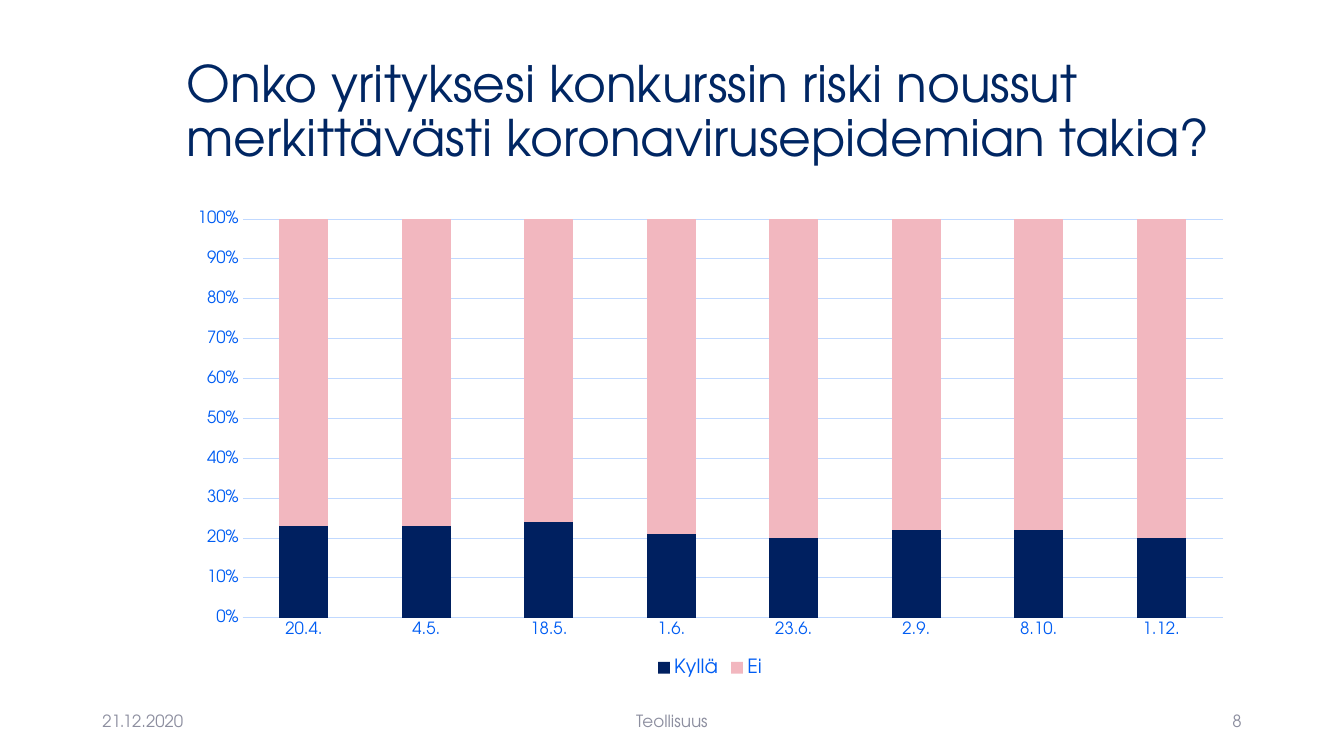
from dataclasses import dataclass

from lxml import etree
from pptx import Presentation
from pptx.chart.data import CategoryChartData
from pptx.dml.color import RGBColor
from pptx.enum.chart import XL_CHART_TYPE, XL_LEGEND_POSITION, XL_TICK_MARK
from pptx.enum.text import MSO_ANCHOR, PP_ALIGN
from pptx.util import Pt

STACKED = XL_CHART_TYPE.COLUMN_STACKED_100
BOTTOM = XL_LEGEND_POSITION.BOTTOM
NO_TICK = XL_TICK_MARK.NONE
MIDDLE = MSO_ANCHOR.MIDDLE
LEFT, CENTER, RIGHT = PP_ALIGN.LEFT, PP_ALIGN.CENTER, PP_ALIGN.RIGHT


@dataclass(frozen=True)
class Theme:
    font: str = "TeX Gyre Adventor"
    title: str = "002663"
    axis: str = "005DF3"
    grid: str = "C1D9FF"
    footer: str = "8C8E9F"
    yes: str = "002060"
    no: str = "F2B7BF"
    title_size: int = 36
    legend_size: int = 14
    small_size: int = 12
    chart_size: int = 10
    line_width: float = 0.75


THEME = Theme()
TITLE = "Onko yrityksesi konkurssin riski noussut merkittävästi koronavirusepidemian takia?"
DATES = ["20.4.", "4.5.", "18.5.", "1.6.", "23.6.", "2.9.", "8.10.", "1.12."]
YES_PERCENT = [23, 23, 24, 21, 20, 22, 22, 20]
SERIES = [
    ("Kyllä", YES_PERCENT, THEME.yes),
    ("Ei", [100 - value for value in YES_PERCENT], THEME.no),
]
FOOTERS = [
    ("21.12.2020", 66, 216, LEFT),
    ("Teollisuus", 318, 324, CENTER),
    ("8", 678, 216, RIGHT),
]
CONTENT_LEFT, CONTENT_WIDTH = 126, 762.5


def style_font(font, size, color):
    font.name = THEME.font
    font.size = Pt(size)
    font.color.rgb = RGBColor.from_string(color)


def style_line(line):
    line.color.rgb = RGBColor.from_string(THEME.grid)
    line.width = Pt(THEME.line_width)


def set_title(slide, text):
    shape = slide.shapes.title
    shape.left, shape.top = Pt(CONTENT_LEFT), Pt(28.8)
    shape.width, shape.height = Pt(CONTENT_WIDTH), Pt(104.4)
    frame = shape.text_frame
    frame.text = text
    frame.word_wrap = True
    frame.vertical_anchor = MIDDLE
    paragraph = frame.paragraphs[0]
    paragraph.alignment = LEFT
    paragraph.line_spacing = 0.9
    style_font(paragraph.font, THEME.title_size, THEME.title)


def add_footer(slide, text, left, width, alignment):
    shape = slide.shapes.add_textbox(Pt(left), Pt(500.4), Pt(width), Pt(28.8))
    frame = shape.text_frame
    frame.text = text
    frame.word_wrap = True
    frame.vertical_anchor = MIDDLE
    paragraph = frame.paragraphs[0]
    paragraph.alignment = alignment
    style_font(paragraph.font, THEME.small_size, THEME.footer)


def style_axis(axis):
    axis.major_tick_mark = NO_TICK
    axis.minor_tick_mark = NO_TICK
    style_font(axis.tick_labels.font, THEME.small_size, THEME.axis)


def add_share_chart(slide):
    data = CategoryChartData(number_format="0")
    data.categories = DATES
    for name, values, _ in SERIES:
        data.add_series(name, values)
    chart = slide.shapes.add_chart(
        STACKED, Pt(CONTENT_LEFT), Pt(144), Pt(CONTENT_WIDTH), Pt(342.7), data
    ).chart
    style_font(chart.font, THEME.chart_size, THEME.title)
    chart.has_title = False

    plot = chart.plots[0]
    plot.gap_width = 150
    plot.overlap = 100
    plot.vary_by_categories = False
    for series, (_, _, color) in zip(plot.series, SERIES):
        series.format.fill.solid()
        series.format.fill.fore_color.rgb = RGBColor.from_string(color)

    style_axis(chart.category_axis)
    style_line(chart.category_axis.format.line)
    value_axis = chart.value_axis
    style_axis(value_axis)
    value_axis.format.line.fill.background()
    value_axis.has_major_gridlines = True
    style_line(value_axis.major_gridlines.format.line)
    value_axis.minimum_scale = 0
    value_axis.maximum_scale = 1
    value_axis.major_unit = 0.1
    value_axis.tick_labels.number_format = "0%"
    value_axis.tick_labels.number_format_is_linked = False

    chart.has_legend = True
    chart.legend.position = BOTTOM
    chart.legend.include_in_layout = False
    style_font(chart.legend.font, THEME.legend_size, THEME.axis)


def main():
    presentation = Presentation()
    presentation.slide_width, presentation.slide_height = Pt(960), Pt(540)
    slide = presentation.slides.add_slide(presentation.slide_layouts[5])
    set_title(slide, TITLE)
    for footer in FOOTERS:
        add_footer(slide, *footer)
    add_share_chart(slide)
    presentation.save("out.pptx")


if __name__ == "__main__":
    main()
